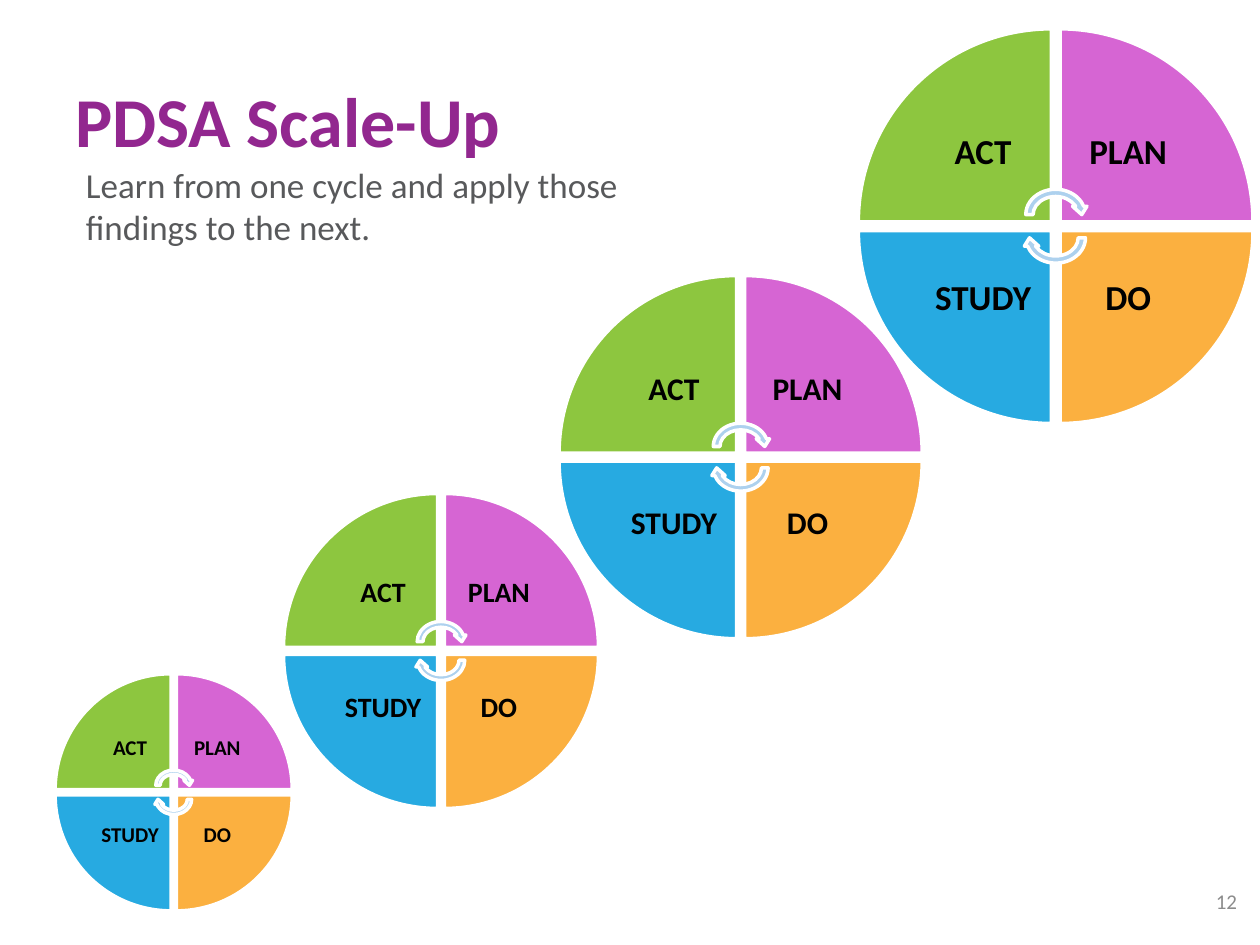
from pptx import Presentation
from pptx import util as u
from pptx.dml.color import RGBColor
from pptx.enum import shapes, text

FONT = "Calibri"
# Clockwise from top left: label, fill, column, row
STEPS = [
    ("ACT", "8DC63F", 0, 0),
    ("PLAN", "D665D3", 1, 0),
    ("DO", "FBB040", 1, 1),
    ("STUDY", "27AAE1", 0, 1),
]
# Box (left, top, size) and label size of each cycle, largest first
CYCLES = [
    ((490.5, 16.5, 225.5), 20),
    ((319.5, 157.5, 207.5), 18),
    ((162, 282, 180), 16),
    ((31.5, 385, 135.5), 12),
]


def color(value):
    return RGBColor.from_string(value)


def add_text(parent, box, words, font, inset=(7.2, 3.6), wrap=True,
             anchor=text.MSO_ANCHOR.MIDDLE, **paragraph_format):
    frame = parent.add_textbox(*map(u.Pt, box)).text_frame
    across, down = map(u.Pt, inset)
    frame_format = {
        "word_wrap": wrap, "vertical_anchor": anchor,
        "margin_left": across, "margin_right": across,
        "margin_top": down, "margin_bottom": down,
    }
    for name, value in frame_format.items():
        setattr(frame, name, value)
    paragraph = frame.paragraphs[0]
    for name, value in paragraph_format.items():
        setattr(paragraph, name, value)
    run = paragraph.add_run()
    run.text = words
    size, hex_color, bold = font
    for name, value in {"name": FONT, "size": u.Pt(size), "bold": bold}.items():
        setattr(run.font, name, value)
    run.font.color.rgb = color(hex_color)


def add_part(parent, kind, box, fill, rotation):
    shape = parent.add_shape(kind, *map(u.Pt, box))
    shape.shadow.inherit = False
    shape.rotation = rotation
    shape.fill.solid()
    shape.fill.fore_color.rgb = color(fill)
    shape.line.color.rgb = color("FFFFFF")
    shape.line.width = u.Pt(2)


def add_cycle(slide, box, font_size):
    left, top, size = box
    parts = slide.shapes.add_group_shape().shapes
    wedge = 0.489 * size
    label = wedge * 0.707
    inset = wedge * 0.104

    # Quarters, each with its label next to the centre
    for index, (words, fill, column, row) in enumerate(STEPS):
        x = left + column * (size - wedge)
        y = top + row * (size - wedge)
        add_part(parts, shapes.MSO_SHAPE.PIE_WEDGE, (x, y, wedge, wedge),
                 fill, 90 * index)
        label_box = (x + (1 - column) * (wedge - label),
                     y + (1 - row) * (wedge - label), label, label)
        add_text(parts, label_box, words, (font_size, "000000", True),
                 inset=(inset, inset), wrap=False,
                 alignment=text.PP_ALIGN.CENTER, line_spacing=0.9)

    # Pair of turning arrows around the centre
    width, height = wedge * 0.346, wedge * 0.3
    for side, rotation in ((-1, 0), (1, 180)):
        middle = top + size / 2 + side * wedge * 0.06
        arrow_box = (left + (size - width) / 2, middle - height / 2, width, height)
        add_part(parts, shapes.MSO_SHAPE.CIRCULAR_ARROW, arrow_box,
                 "ADD1EE", rotation)


def add_heading(slide, box):
    left, top, width = box
    add_text(slide.shapes, (left, top, width, 93.5), "PDSA Scale-Up",
             (40, "92278F", True))
    add_text(slide.shapes, (left + 6, top + 68.5, width - 48, 186),
             "Learn from one cycle and apply those findings to the next.",
             (20, "58595B", False), anchor=text.MSO_ANCHOR.TOP)


def add_page_number(slide, box):
    add_text(slide.shapes, box, "12", (12, "8C8C8C", False),
             alignment=text.PP_ALIGN.RIGHT)


def main():
    presentation = Presentation()
    presentation.slide_width = u.Pt(720)
    presentation.slide_height = u.Pt(540)
    slide = presentation.slides.add_slide(presentation.slide_layouts[6])
    add_heading(slide, (36, 21.5, 390))
    for box, font_size in CYCLES:
        add_cycle(slide, box, font_size)
    add_page_number(slide, (678, 500.5, 36, 29))
    presentation.save("out.pptx")


if __name__ == "__main__":
    main()
